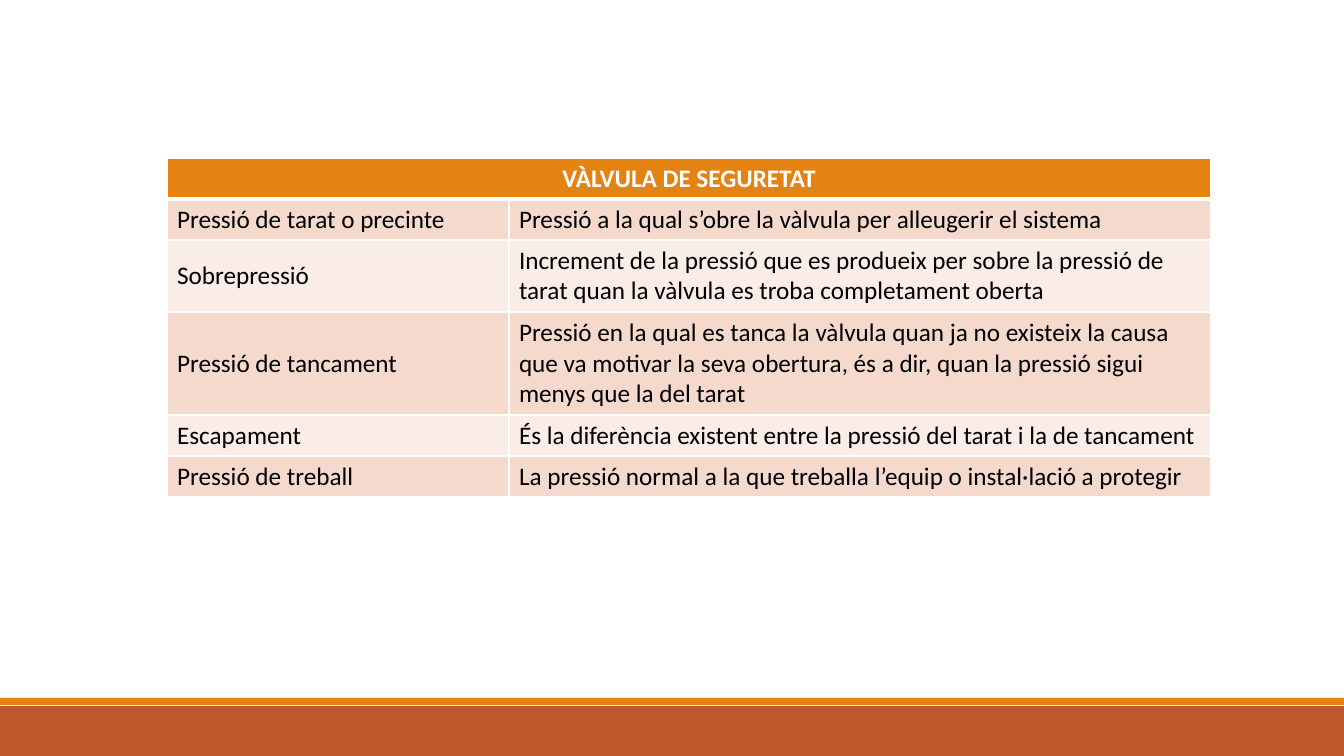
"""Build the slide that defines the pressures of a safety valve."""
from dataclasses import dataclass

from lxml import etree
from pptx import Presentation, util as u
from pptx.dml.color import RGBColor
from pptx.enum import shapes, text
from pptx.oxml.ns import qn

PX_PER_INCH = 100.8
SLIDE_WIDTH, SLIDE_HEIGHT = 1344, 756
TABLE_LEFT, TABLE_TOP = 167, 158
COLUMN_WIDTHS = (342, 702)
LINE_HEIGHT, ROW_PADDING = 31, 10
COLORS = {
    "header": "E48312",
    "footer": "BD582C",
    "odd_row": "F5D9CC",
    "even_row": "FAEDE7",
    "white": "FFFFFF",
    "black": "000000",
}


@dataclass(frozen=True)
class Band:
    top: int
    height: int
    color: str


@dataclass(frozen=True)
class Definition:
    term: str
    meaning: str
    lines: int = 1


BANDS = (Band(706, 50, "footer"), Band(698, 7, "header"))
HEADING = "VÀLVULA DE SEGURETAT"
DEFINITIONS = (
    Definition("Pressió de tarat o precinte",
               "Pressió a la qual s’obre la vàlvula per alleugerir el sistema"),
    Definition("Sobrepressió",
               "Increment de la pressió que es produeix per sobre la pressió de "
               "tarat quan la vàlvula es troba completament oberta", 2),
    Definition("Pressió de tancament",
               "Pressió en la qual es tanca la vàlvula quan ja no existeix la causa "
               "que va motivar la seva obertura, és a dir, quan la pressió sigui "
               "menys que la del tarat", 3),
    Definition("Escapament",
               "És la diferència existent entre la pressió del tarat i la de tancament"),
    Definition("Pressió de treball",
               "La pressió normal a la que treballa l’equip o instal·lació a protegir"),
)


def px(length: int) -> u.Emu:
    """Turn whole pixels into EMU."""
    return u.Emu(round(length * u.Inches(1) / PX_PER_INCH))


def rgb(name: str) -> RGBColor:
    """Look up a named colour."""
    return RGBColor.from_string(COLORS[name])


def write(frame, words: str, *, color: str = "black", bold: bool = False,
          align=text.PP_ALIGN.LEFT, size: int = 18) -> None:
    """Put formatted text into a text frame."""
    paragraph = frame.paragraphs[0]
    paragraph.alignment = align
    run = paragraph.add_run()
    run.text = words
    run.font.name = "Calibri"
    run.font.size = u.Pt(size)
    run.font.bold = bold
    run.font.color.rgb = rgb(color)


def style_cell(cell, fill: str, top: int = 1, bottom: int = 1) -> None:
    """Give a cell white borders, in points, and a solid fill."""
    properties = cell._tc.get_or_add_tcPr()
    for side, width in (("L", 1), ("R", 1), ("T", top), ("B", bottom)):
        border = etree.SubElement(properties, qn(f"a:ln{side}"), w=str(u.Pt(width)))
        solid = etree.SubElement(border, qn("a:solidFill"))
        etree.SubElement(solid, qn("a:srgbClr"), val=COLORS["white"])
    cell.fill.solid()
    cell.fill.fore_color.rgb = rgb(fill)
    cell.vertical_anchor = text.MSO_ANCHOR.MIDDLE


def draw_band(slide, band: Band) -> None:
    """Draw a strip across the slide."""
    strip = slide.shapes.add_shape(shapes.MSO_SHAPE.RECTANGLE, 0, px(band.top),
                                   px(SLIDE_WIDTH), px(band.height))
    strip.shadow.inherit = False
    strip.fill.solid()
    strip.fill.fore_color.rgb = rgb(band.color)
    strip.line.fill.background()


def draw_definitions(slide, definitions: tuple[Definition, ...]) -> None:
    """Draw the heading row and one row per definition."""
    heights = [LINE_HEIGHT * lines + ROW_PADDING
               for lines in (1, *(entry.lines for entry in definitions))]
    glossary = slide.shapes.add_table(
        len(heights), len(COLUMN_WIDTHS), px(TABLE_LEFT), px(TABLE_TOP),
        px(sum(COLUMN_WIDTHS)), px(sum(heights))).table
    glossary.horz_banding = False
    for column, width in zip(glossary.columns, COLUMN_WIDTHS):
        column.width = px(width)
    for row, height in zip(glossary.rows, heights):
        row.height = px(height)

    heading = glossary.cell(0, 0)
    heading.merge(glossary.cell(0, 1))
    for cell in glossary.rows[0].cells:
        style_cell(cell, "header", bottom=3)
    write(heading.text_frame, HEADING, color="white", bold=True,
          align=text.PP_ALIGN.CENTER)

    for index, entry in enumerate(definitions, start=1):
        fill = "odd_row" if index % 2 else "even_row"
        for cell, words in zip(glossary.rows[index].cells, (entry.term, entry.meaning)):
            style_cell(cell, fill, top=3 if index == 1 else 1)
            write(cell.text_frame, words)


def main() -> None:
    """Build and save the presentation."""
    deck = Presentation()
    deck.slide_width, deck.slide_height = px(SLIDE_WIDTH), px(SLIDE_HEIGHT)
    slide = deck.slides.add_slide(deck.slide_layouts[6])
    for band in BANDS:
        draw_band(slide, band)
    draw_definitions(slide, DEFINITIONS)
    deck.save("out.pptx")


if __name__ == "__main__":
    main()
